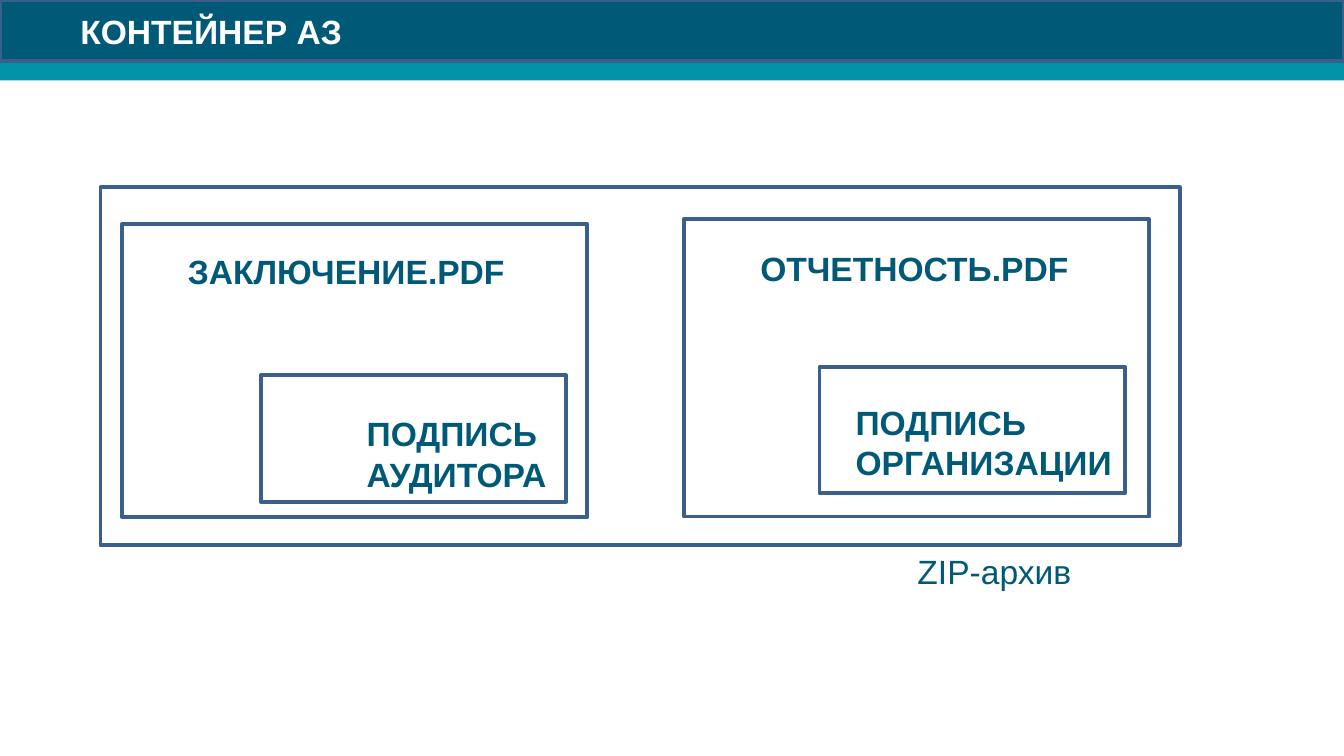
from pptx import Presentation
from pptx.dml.color import RGBColor
from pptx.enum.shapes import MSO_SHAPE
from pptx.enum.text import MSO_ANCHOR, PP_ALIGN
from pptx.util import Cm, Pt

RECT = MSO_SHAPE.RECTANGLE
TOP, MIDDLE = MSO_ANCHOR.TOP, MSO_ANCHOR.MIDDLE
LEFT = PP_ALIGN.LEFT

COLORS = {
    "teal": "0093A7",
    "navy": "005A77",
    "line": "3A5F8C",
    "white": "FFFFFF",
}


class SlideBuilder:
    """Draws styled rectangles and labels on one slide."""

    def __init__(self, s):
        self.s = s
        self.font = {"name": "Arial", "size": Pt(18), "bold": True}
        self.line_width = Pt(2)

    def color(self, name):
        return RGBColor.from_string(COLORS[name])

    def rect(self, box, fill=None, outlined=True):
        sp = self.s.shapes.add_shape(RECT, *map(Cm, box))
        sp.shadow.inherit = False
        if fill:
            sp.fill.solid()
            sp.fill.fore_color.rgb = self.color(fill)
        else:
            sp.fill.background()
        if outlined:
            sp.line.color.rgb = self.color("line")
            sp.line.width = self.line_width
        else:
            sp.line.fill.background()

    def label(self, box, lines, color="navy", wrap=False, anchor=TOP, **font):
        tf = self.s.shapes.add_textbox(*map(Cm, box)).text_frame
        tf.word_wrap = wrap
        tf.vertical_anchor = anchor
        for i, line in enumerate(lines):
            p = tf.add_paragraph() if i else tf.paragraphs[0]
            p.alignment = LEFT
            r = p.add_run()
            r.text = line
            for key, value in {**self.font, **font}.items():
                setattr(r.font, key, value)
            r.font.color.rgb = self.color(color)


def main():
    prs = Presentation()
    prs.slide_width, prs.slide_height = Cm(25.4), Cm(14.28)
    b = SlideBuilder(prs.slides.add_slide(prs.slide_layouts[6]))

    b.rect((0, 0, 25.4, 1.52), "teal", outlined=False)
    b.rect((0, 0, 25.4, 1.15), "navy")
    b.label((1.27, 0, 22.86, 1.17), ["КОНТЕЙНЕР АЗ"], "white", wrap=True, anchor=MIDDLE)

    b.rect((1.9, 3.54, 20.4, 6.76))
    documents = [
        ((2.31, 4.23, 8.79, 5.54), (3.3, 4.62, 6.55, 1.02), "ЗАКЛЮЧЕНИЕ.PDF",
         (4.93, 7.09), (6.68, 7.68, 3.99, 1.8), ["ПОДПИСЬ", "АУДИТОРА"]),
        ((12.93, 4.14, 8.79, 5.62), (14.12, 4.56, 6.6, 1.02), "ОТЧЕТНОСТЬ.PDF",
         (15.49, 6.93), (15.92, 7.47, 5.41, 1.8), ["ПОДПИСЬ", "ОРГАНИЗАЦИИ"]),
    ]
    for frame, name_box, name, corner, signature_box, signature in documents:
        b.rect(frame)
        b.rect((*corner, 5.77, 2.39))
        b.label(name_box, [name])
        b.label(signature_box, signature)
    b.label((17.09, 10.29, 5.54, 1.02), ["ZIP-архив"], wrap=True, bold=False)

    prs.save("out.pptx")


if __name__ == "__main__":
    main()
